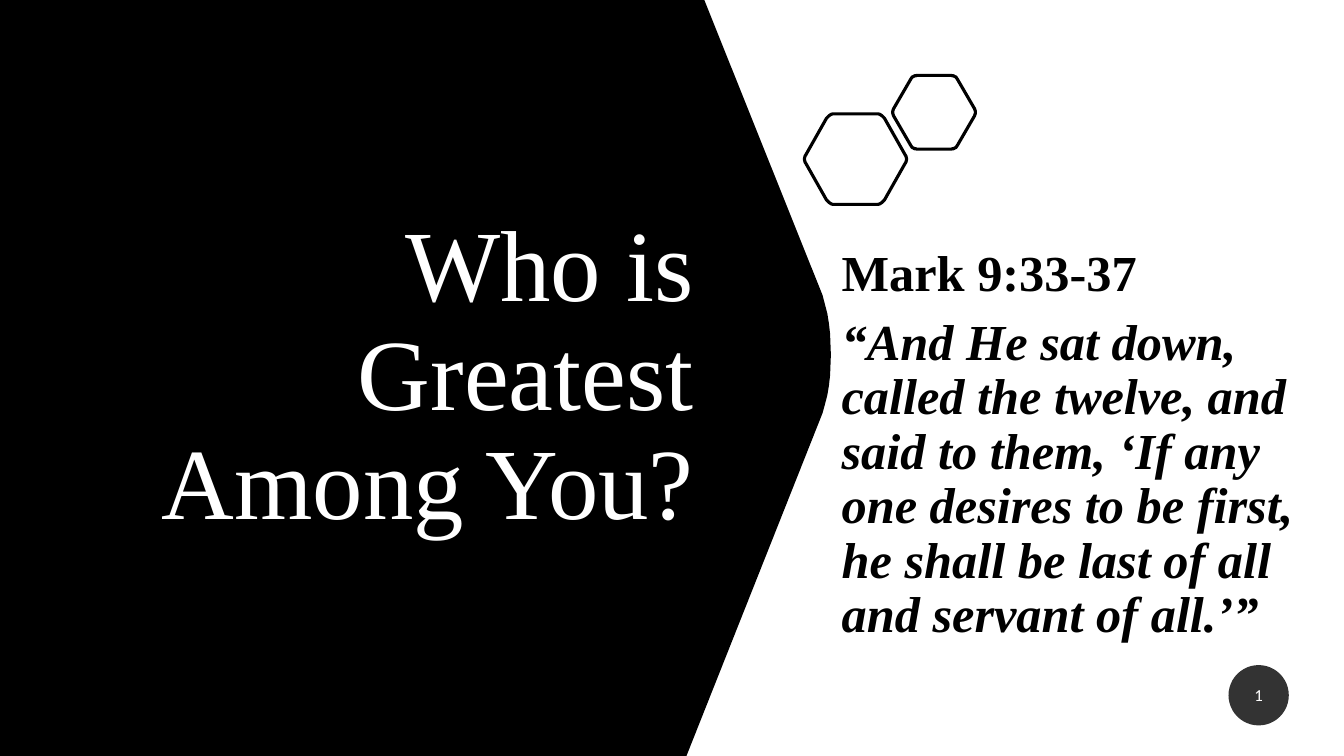
import math

from lxml import etree
from pptx import Presentation
from pptx import util as u
from pptx.dml.color import RGBColor
from pptx.enum import shapes, text
from pptx.oxml.ns import qn


def color(hex_string):
    return RGBColor.from_string(hex_string)


def curve(controls, steps=12):
    """Points along the Bezier curve with the given control points."""
    degree = len(controls) - 1
    points = []
    for step in range(steps + 1):
        t = step / steps
        weights = [math.comb(degree, i) * t**i * (1 - t) ** (degree - i)
                   for i in range(degree + 1)]
        points.append((sum(w * x for w, (x, y) in zip(weights, controls)),
                       sum(w * y for w, (x, y) in zip(weights, controls))))
    return points


presentation = Presentation()
presentation.slide_width = u.Cm(33.87)
presentation.slide_height = u.Cm(19.05)
slide = presentation.slides.add_slide(presentation.slide_layouts[6])

# Black panel with a rounded tip
tip = curve([(20.73, 7.44), (21.01, 8.31), (21.01, 9.58), (20.73, 10.41)])
panel = [(0, 0), (17.75, 0), *tip, (17.3, 19.05), (0, 19.05)]
outlines = [(panel, True)]

# Two hexagons with rounded corners: centre x, centre y, radius
rounding = 0.1
for center_x, center_y, radius in [(21.56, 4.01, 1.32), (23.54, 2.83, 1.07)]:
    corners = [(center_x + radius * math.cos(math.radians(angle)),
                center_y + radius * math.sin(math.radians(angle)))
               for angle in range(0, 360, 60)]
    hexagon = []
    for i, (x, y) in enumerate(corners):
        before, after = [(x + rounding * (near_x - x), y + rounding * (near_y - y))
                         for near_x, near_y in (corners[i - 1], corners[(i + 1) % 6])]
        hexagon += curve([before, (x, y), after], 6)
    outlines.append((hexagon, False))

# Draw the outlines in hundredths of a centimetre
for points, filled in outlines:
    points = [(round(x * 100), round(y * 100)) for x, y in points]
    builder = slide.shapes.build_freeform(*points[0], scale=u.Cm(0.01))
    builder.add_line_segments(points[1:], close=True)
    shape = builder.convert_to_shape()
    shape.shadow.inherit = False
    if filled:
        shape.fill.solid()
        shape.fill.fore_color.rgb = color("000000")
        shape.line.fill.background()
    else:
        shape.fill.background()
        shape.line.color.rgb = color("000000")
        shape.line.width = u.Pt(2.25)

# Page number circle
circle = slide.shapes.add_shape(shapes.MSO_SHAPE.OVAL, u.Cm(30.96), u.Cm(16.76),
                                u.Cm(1.52), u.Cm(1.52))
circle.shadow.inherit = False
circle.fill.solid()
circle.fill.fore_color.rgb = color("000000")
circle.line.fill.background()
circle_color = circle.fill._xPr.find(qn("a:solidFill"))[0]
etree.SubElement(circle_color, qn("a:alpha"), val="80000")

# Title and verse boxes
title = slide.shapes.add_textbox(u.Cm(1.5), u.Cm(3.53), u.Cm(16.23), u.Cm(11.99))
verse = slide.shapes.add_textbox(u.Cm(20.96), u.Cm(5.66), u.Cm(12.67), u.Cm(11.15))

# Text: shape, wording, font, size, colour, bold, italic, alignment, spacing, space before
left, center, right = text.PP_ALIGN.LEFT, text.PP_ALIGN.CENTER, text.PP_ALIGN.RIGHT
serif = "Times New Roman"
for shape, wording, font, size, ink, bold, italic, align, spacing, before in [
    (title, "Who is Greatest Among You?", serif, 72, "FFFFFF", False, False, right, 0.9, 0),
    (verse, "Mark 9:33-37", serif, 36, "000000", True, False, left, 0.9, 10),
    (verse, "“And He sat down, called the twelve, and said to them, ‘If any one desires "
            "to be first, he shall be last of all and servant of all.’”",
     serif, 36, "000000", True, True, left, 0.9, 10),
    (circle, "1", "Calibri", 12, "FFFFFF", False, False, center, 1.0, 0),
]:
    frame = shape.text_frame
    frame.word_wrap = True
    frame.vertical_anchor = text.MSO_ANCHOR.MIDDLE
    paragraph = frame.add_paragraph() if frame.text else frame.paragraphs[0]
    paragraph.alignment = align
    paragraph.line_spacing = spacing
    paragraph.space_before = u.Pt(before)
    run = paragraph.add_run()
    run.text = wording
    run.font.name = font
    run.font.size = u.Pt(size)
    run.font.bold = bold
    run.font.italic = italic
    run.font.color.rgb = color(ink)

presentation.save("out.pptx")
